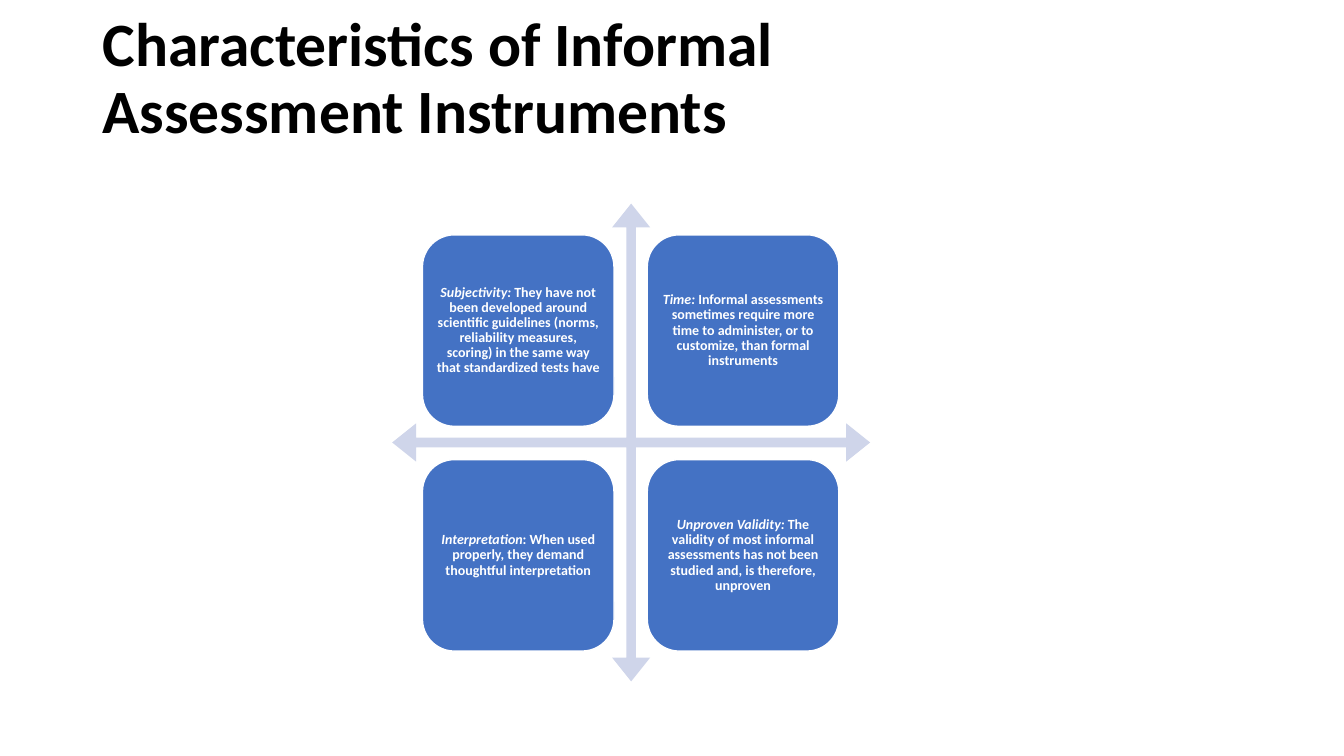
from pptx import Presentation
from pptx.dml.color import RGBColor as Rgb
from pptx.enum.shapes import MSO_SHAPE as Kind
from pptx.enum.text import MSO_ANCHOR as Anchor, PP_ALIGN as Align
from pptx.util import Inches, Pt


class Deck:
    font = "Calibri"
    hues = {"ink": "000000", "white": "FFFFFF", "blue": "4472C4", "pale": "CFD5EA"}

    def __init__(self, wide, high):
        self.deck = Presentation()
        self.deck.slide_width = Inches(wide)
        self.deck.slide_height = Inches(high)
        self.slide = self.deck.slides.add_slide(self.deck.slide_layouts[6])

    def hue(self, name):
        return Rgb.from_string(self.hues[name])

    def run(self, para, text, size, hue, slant=False):
        run = para.add_run()
        run.text = text
        font = run.font
        font.name = self.font
        font.size = Pt(size)
        font.bold = True
        font.italic = slant
        font.color.rgb = self.hue(hue)

    def frame(self, shape, align, pad=None):
        frame = shape.text_frame
        frame.word_wrap = True
        frame.vertical_anchor = Anchor.MIDDLE
        if pad is not None:
            frame.margin_left = frame.margin_right = Inches(pad)
            frame.margin_top = frame.margin_bottom = Inches(pad)
        para = frame.paragraphs[0]
        para.alignment = align
        para.line_spacing = 0.9
        return para

    def title(self, lines, *place):
        box = self.slide.shapes.add_textbox(*map(Inches, place))
        para = self.frame(box, Align.LEFT)
        for i, line in enumerate(lines):
            if i:
                para.add_line_break()
            self.run(para, line, 44, "ink")

    def shape(self, kind, fill, *place):
        shape = self.slide.shapes.add_shape(kind, *map(Inches, place))
        shape.shadow.inherit = False
        shape.fill.solid()
        shape.fill.fore_color.rgb = self.hue(fill)
        shape.line.fill.background()
        return shape

    def cross(self, left, top, side):
        cross = self.shape(Kind.QUAD_ARROW, "pale", left, top, side, side)
        for i, part in enumerate((0.02, 0.04, 0.05)):
            cross.adjustments[i] = part

    def card(self, head, body, left, top, side):
        card = self.shape(Kind.ROUNDED_RECTANGLE, "blue", left, top, side, side)
        card.line.color.rgb = self.hue("white")
        card.line.width = Pt(1)
        para = self.frame(card, Align.CENTER, 0.04)
        self.run(para, head, 10, "white", True)
        self.run(para, body, 10, "white")

    def save(self):
        self.deck.save("out.pptx")


def main():
    deck = Deck(13.33, 7.5)
    deck.title(["Characteristics of Informal", "Assessment Instruments"],
               0.92, 0.07, 11.5, 1.45)
    deck.cross(3.89, 2.02, 4.74)
    cards = [
        ("Subjectivity: ", "They have not been developed around scientific "
         "guidelines (norms, reliability measures, scoring) in the same way "
         "that standardized tests have"),
        ("Time: ", "Informal assessments sometimes require more time to "
         "administer, or to customize, than formal instruments"),
        ("Interpretation", ": When used properly, they demand thoughtful "
         "interpretation"),
        ("Unproven Validity: ", "The validity of most informal assessments "
         "has not been studied and, is therefore, unproven"),
    ]
    step = 2.23
    for i, (head, body) in enumerate(cards):
        row, col = divmod(i, 2)
        deck.card(head, body, 4.19 + col * step, 2.33 + row * step, 1.9)
    deck.save()


if __name__ == "__main__":
    main()
